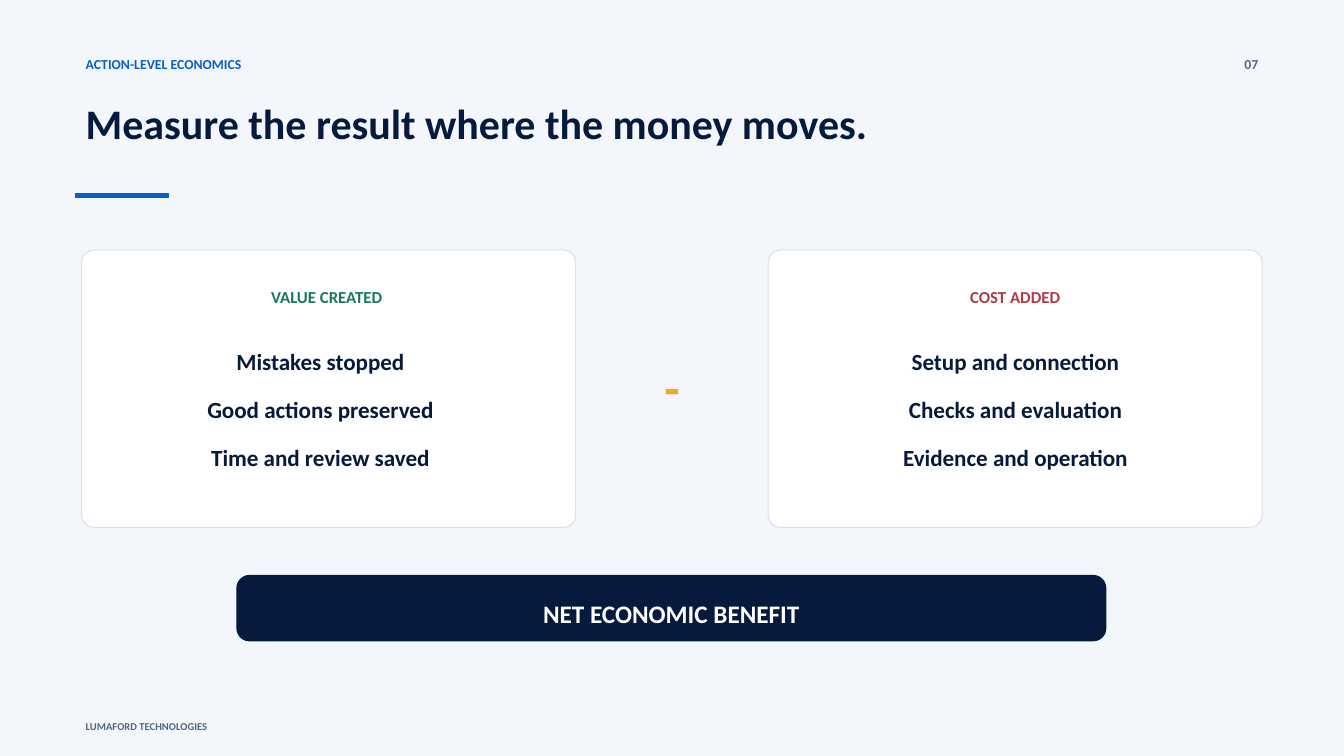
from pptx import Presentation
from pptx.dml.color import RGBColor
from pptx.enum.shapes import MSO_SHAPE
from pptx.enum.text import PP_ALIGN
from pptx.util import Cm, Pt

PAPER = RGBColor(0xF3, 0xF7, 0xFC)
WHITE = RGBColor(0xFF, 0xFF, 0xFF)
NAVY = RGBColor(0x06, 0x1A, 0x3D)
BLUE = RGBColor(0x07, 0x5E, 0xC7)
SLATE = RGBColor(0x53, 0x65, 0x7F)
EDGE = RGBColor(0xD7, 0xE1, 0xEF)
GREEN = RGBColor(0x16, 0x7A, 0x5A)
RED = RGBColor(0xB2, 0x3A, 0x48)
AMBER = RGBColor(0xF5, 0xA6, 0x23)

FONT = "Calibri"
WIDTH, HEIGHT = 33.87, 19.05
LEFT = 1.91
CARD_TOP, CARD_WIDTH, CARD_HEIGHT = 6.3, 12.45, 6.99
ITEM_STEP = 1.21


def add_text(slide, box, text, size, color, align=PP_ALIGN.LEFT):
    frame = slide.shapes.add_textbox(*map(Cm, box)).text_frame
    frame.word_wrap = True
    frame.text = text
    line = frame.paragraphs[0]
    line.alignment = align
    font = line.runs[0].font
    font.name, font.size, font.bold = FONT, Pt(size), True
    font.color.rgb = color


def add_panel(slide, box, fill, edge, weight=0.75, corner=None):
    """Add a filled box, rounded when a corner ratio is given."""
    kind = MSO_SHAPE.RECTANGLE if corner is None else MSO_SHAPE.ROUNDED_RECTANGLE
    panel = slide.shapes.add_shape(kind, *map(Cm, box))
    if corner is not None:
        panel.adjustments[0] = corner
    panel.shadow.inherit = False
    panel.fill.solid()
    panel.fill.fore_color.rgb = fill
    panel.line.color.rgb = edge
    panel.line.width = Pt(weight)


def add_header(slide, left, top, width):
    add_text(slide, (left, top, 20.12, 0.64), "ACTION-LEVEL ECONOMICS", 9.8, BLUE)
    add_text(slide, (left + width - 1.27, top, 1.27, 0.64), "07", 9.8, SLATE,
             PP_ALIGN.RIGHT)
    add_text(slide, (left, top + 1.07, width, 2.44),
             "Measure the result where the money moves.", 30, NAVY)
    add_panel(slide, (left, top + 3.61, 2.34, 0.11), BLUE, BLUE, 0)


def add_card(slide, left, top, title, color, items, title_width, item_width):
    add_panel(slide, (left, top, CARD_WIDTH, CARD_HEIGHT), WHITE, EDGE,
              corner=0.045)
    add_text(slide, (left + 0.75, top + 0.79, title_width, 0.74), title, 12,
             color, PP_ALIGN.CENTER)
    for i, item in enumerate(items):
        box = (left + 0.86, top + 2.34 + i * ITEM_STEP, item_width, 0.79)
        add_text(slide, box, item, 16.5, NAVY, PP_ALIGN.CENTER)


def add_result(slide, left, top, width, height):
    add_panel(slide, (left, top, width, height), NAVY, NAVY, corner=0.194)
    add_text(slide, (left + 0.48, top + 0.46, width - 0.96, 0.79),
             "NET ECONOMIC BENEFIT", 18, WHITE, PP_ALIGN.CENTER)


def main():
    deck = Presentation()
    deck.slide_width, deck.slide_height = Cm(WIDTH), Cm(HEIGHT)
    slide = deck.slides.add_slide(deck.slide_layouts[6])
    slide.background.fill.solid()
    slide.background.fill.fore_color.rgb = PAPER

    add_header(slide, LEFT, 1.27, 30.05)
    add_card(slide, 2.06, CARD_TOP, "VALUE CREATED", GREEN,
             ["Mistakes stopped", "Good actions preserved",
              "Time and review saved"], 10.85, 10.31)
    add_text(slide, (15.82, 8.86, 2.24, 1.57), "-", 36, AMBER, PP_ALIGN.CENTER)
    add_card(slide, 19.36, CARD_TOP, "COST ADDED", RED,
             ["Setup and connection", "Checks and evaluation",
              "Evidence and operation"], 10.95, 10.74)
    add_result(slide, 5.97, 14.5, 21.9, 1.65)
    add_text(slide, (LEFT, 18.03, 11.13, 0.48), "LUMAFORD TECHNOLOGIES", 7.5,
             SLATE)
    deck.save("out.pptx")


if __name__ == "__main__":
    main()
